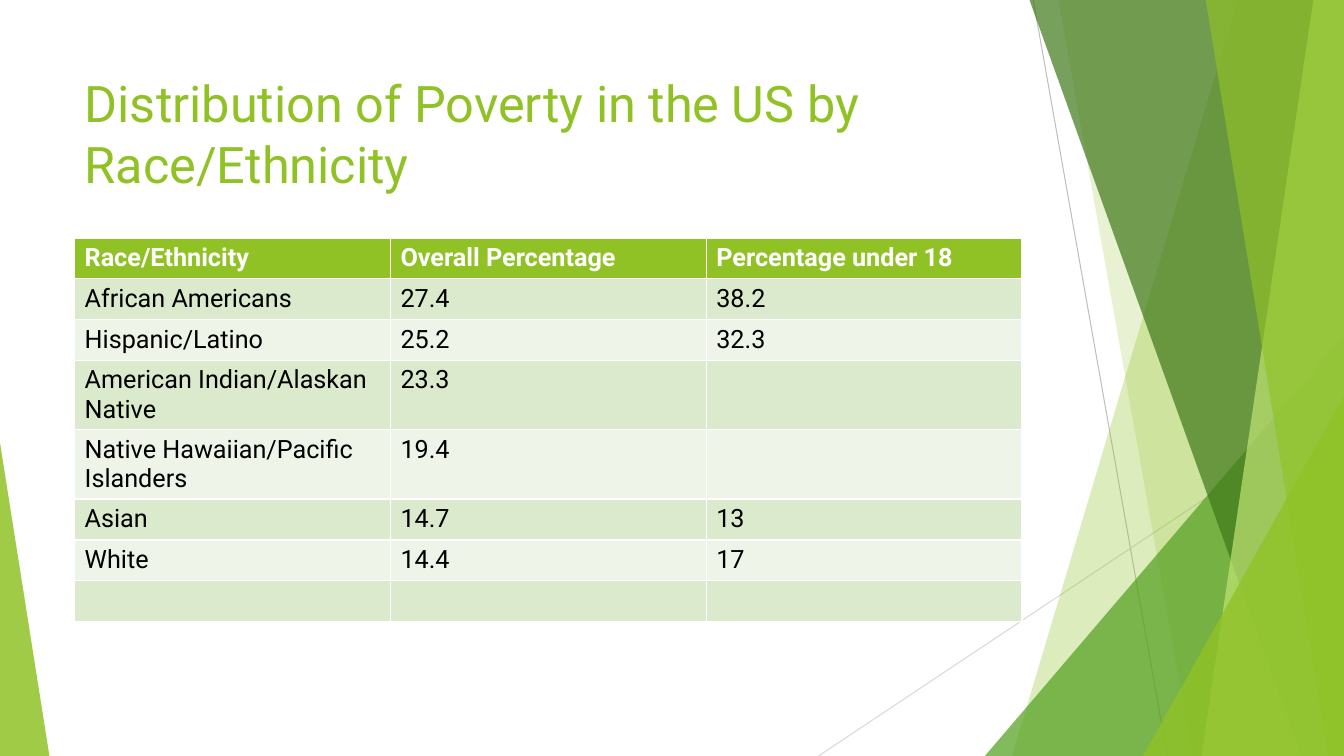
from pptx import Presentation
from pptx.dml.color import RGBColor
from pptx.enum.shapes import MSO_CONNECTOR as Conn, MSO_SHAPE as Shape
from pptx.enum.text import MSO_ANCHOR as Anchor, MSO_AUTO_SIZE as AutoSize, PP_ALIGN as Align
from pptx.oxml.xmlchemy import OxmlElement
from pptx.util import Inches, Pt

WIDTH, HEIGHT = Inches(13.333), Inches(7.5)
FONT = "Roboto"
LIME, GREEN, FOREST, PALE = "90C226", "54A021", "3F7819", "C0E474"
BANDS = ("DBE9CD", "EEF4E8")
LEFT, CONTENT_W = 5.55, 70.5
ROW_H = 5.41

ROWS = [
    ("Race/Ethnicity", "Overall Percentage", "Percentage under 18"),
    ("African Americans", "27.4", "38.2"),
    ("Hispanic/Latino", "25.2", "32.3"),
    ("American Indian/Alaskan Native", "23.3", ""),
    ("Native Hawaiian/Pacific Islanders", "19.4", ""),
    ("Asian", "14.7", "13"),
    ("White", "14.4", "17"),
    ("", "", ""),
]


def px(share):
    """Percent of the slide width as a length."""
    return round(WIDTH * share / 100)


def py(share):
    """Percent of the slide height as a length."""
    return round(HEIGHT * share / 100)


def box(left, top, width, height):
    return px(left), py(top), px(width), py(height)


def paint(color_format, color):
    color_format.rgb = RGBColor.from_string(color)


def fill_solid(target, color):
    target.fill.solid()
    paint(target.fill.fore_color, color)


def format_font(font, color, **values):
    paint(font.color, color)
    for name, value in {"name": FONT, **values}.items():
        setattr(font, name, value)


def tint(shape, color, opacity):
    """Fill with a see-through colour, without outline or shadow."""
    fill_solid(shape, color)
    shape.line.fill.background()
    shape.shadow.inherit = False
    alpha = OxmlElement("a:alpha")
    alpha.set("val", str(opacity * 1000))
    shape.element.spPr.xpath("./a:solidFill/a:srgbClr")[0].append(alpha)


def add_ray(s, start, end, color):
    ray = s.shapes.add_connector(Conn.STRAIGHT, px(start[0]), py(start[1]),
                                 px(end[0]), py(end[1]))
    paint(ray.line.color, color)
    ray.line.width = Pt(0.75)
    ray.element.spPr.append(OxmlElement("a:effectLst"))


def add_blade(s, top_x, bottom_x, color, opacity):
    """Full-height panel with a slanted left edge, reaching the right edge."""
    builder = s.shapes.build_freeform(px(top_x), py(-0.1))
    corners = [(100, -0.1), (100, 100), (bottom_x, 100)]
    builder.add_line_segments([(px(x), py(y)) for x, y in corners], close=True)
    tint(builder.convert_to_shape(), color, opacity)


def add_wedge(s, left, right, top, apex, color, opacity):
    """Triangle standing on the bottom edge of the slide."""
    sp = s.shapes.add_shape(Shape.ISOSCELES_TRIANGLE,
                            *box(left, top, right - left, 100 - top))
    sp.adjustments[0] = apex
    tint(sp, color, opacity)


def add_decoration(s):
    add_ray(s, (76.88, 0), (86.85, 100), "BFBFBF")
    add_ray(s, (100, 53.73), (60.9, 100), "D9D9D9")
    add_blade(s, 92.1, 75.3, LIME, 30)
    add_blade(s, 78.75, 88.73, LIME, 20)
    add_wedge(s, 73.28, 100, 44.4, 1, GREEN, 72)
    add_blade(s, 76.58, 96.83, FOREST, 70)
    add_blade(s, 97.73, 89.4, PALE, 70)
    add_blade(s, 89.7, 98.85, LIME, 65)
    add_wedge(s, 85.05, 100, 52.4, 1, LIME, 80)
    add_wedge(s, 0, 3.68, 58.53, 0, LIME, 85)


def set_title(s, text):
    title = s.shapes.title
    title.left, title.top, title.width, title.height = box(LEFT, 8.93, CONTENT_W, 19.2)
    tf = title.text_frame
    tf.text = text
    for name, value in {"word_wrap": True, "auto_size": AutoSize.NONE,
                        "vertical_anchor": Anchor.TOP}.items():
        setattr(tf, name, value)
    p = tf.paragraphs[0]
    p.alignment = Align.LEFT
    format_font(p.runs[0].font, LIME, size=Pt(36))
    title.element.getparent().append(title.element)


def add_data_table(s, rows):
    frame = s.shapes.add_table(len(rows), len(rows[0]),
                               *box(LEFT, 31.47, CONTENT_W, ROW_H * len(rows)))
    for i, values in enumerate(rows):
        header = i == 0
        for j, value in enumerate(values):
            cell = frame.table.cell(i, j)
            fill_solid(cell, LIME if header else BANDS[(i - 1) % 2])
            cell.text = value
            format_font(cell.text_frame.paragraphs[0].font,
                        "FFFFFF" if header else "000000", size=Pt(18), bold=header)


def main():
    prs = Presentation()
    prs.slide_width, prs.slide_height = WIDTH, HEIGHT
    s = prs.slides.add_slide(prs.slide_layouts[5])
    add_decoration(s)
    set_title(s, "Distribution of Poverty in the US by Race/Ethnicity")
    add_data_table(s, ROWS)
    prs.save("out.pptx")


if __name__ == "__main__":
    main()
